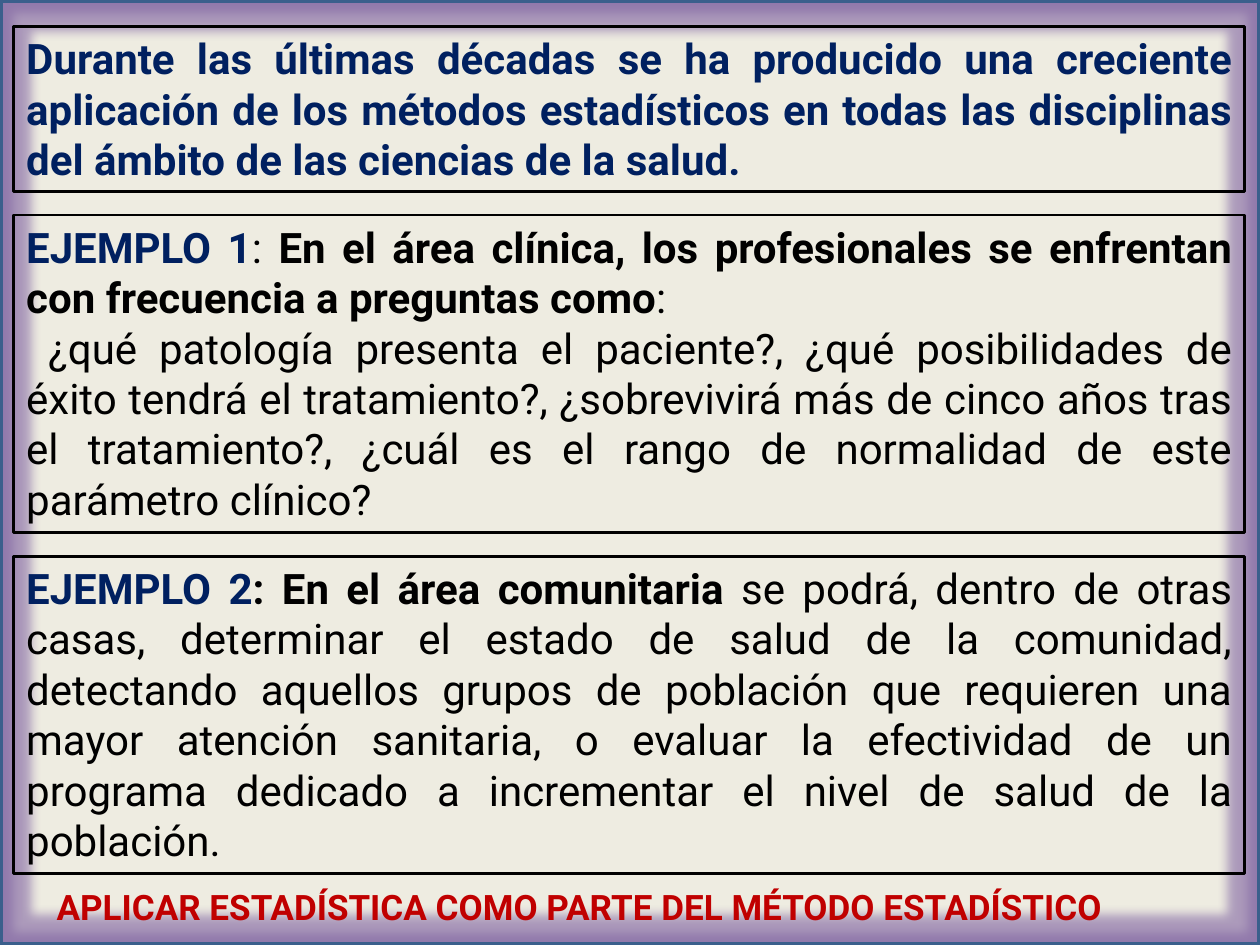
from typing import NamedTuple

from lxml.etree import SubElement
from pptx import Presentation
from pptx.dml.color import RGBColor
from pptx.enum.shapes import MSO_SHAPE as Shape
from pptx.enum.text import MSO_ANCHOR as Anchor, MSO_AUTO_SIZE as AutoSize, PP_ALIGN as Align
from pptx.oxml.ns import qn
from pptx.util import Inches, Pt

CREAM = RGBColor(0xEE, 0xEC, 0xE1)
NAVY = RGBColor(0x00, 0x20, 0x60)
BLACK = RGBColor(0x00, 0x00, 0x00)
RED = RGBColor(0xC0, 0x00, 0x00)
FRAME_BLUE = RGBColor(0x3A, 0x5F, 0x8C)
GLOW_PURPLE = RGBColor(0x80, 0x64, 0xA2)

FONT = "Roboto"
WIDTH, HEIGHT = Inches(10), Inches(7.5)
BODY_SIZE = Pt(24)
LINE_HEIGHT = 1.21 * BODY_SIZE
PADDING = Inches(0.05)

# Shares of the slide's size
BOX_LEFT, BOX_WIDTH = 0.011, 0.977
FIRST_TOP, GAP = 0.028, 0.025
CLOSING_LEFT, CLOSING_TOP, CLOSING_WIDTH, CLOSING_HEIGHT = 0.035, 0.93, 0.965, 0.06


class Piece(NamedTuple):
    text: str
    color: RGBColor = BLACK
    bold: bool = False


class Box(NamedTuple):
    lines: int
    paragraphs: list[list[Piece]]


BOXES = [
    Box(3, [[Piece("Durante las últimas décadas se ha producido una creciente aplicación de los "
                   "métodos estadísticos en todas las disciplinas del ámbito de las ciencias de "
                   "la salud.", NAVY, True)]]),
    Box(6, [
        [Piece("EJEMPLO 1", NAVY, True),
         Piece(": "),
         Piece("En el área clínica, los profesionales se enfrentan con frecuencia a "
               "preguntas como", bold=True),
         Piece(":")],
        [Piece(" ¿qué patología presenta el paciente?, ¿qué posibilidades de éxito tendrá el "
               "tratamiento?, ¿sobrevivirá más de cinco años tras el tratamiento?, ¿cuál es el "
               "rango de normalidad de este parámetro clínico?")],
    ]),
    Box(6, [
        [Piece("EJEMPLO 2", NAVY, True),
         Piece(": En el área comunitaria ", bold=True),
         Piece("se podrá, dentro de otras casas, determinar el estado de salud de la comunidad, "
               "detectando aquellos grupos de población que requieren una mayor atención "
               "sanitaria, o evaluar la efectividad de un programa dedicado a incrementar el "
               "nivel de salud de la población.")],
    ]),
]
CLOSING = [[Piece("APLICAR ESTADÍSTICA COMO PARTE DEL MÉTODO ESTADÍSTICO", RED, True)]]


def add_outline(slide, left: int, top: int, width: int, height: int,
                color: RGBColor, weight: float):
    """Add an unfilled rectangle with a coloured line."""
    outline = slide.shapes.add_shape(Shape.RECTANGLE, left, top, width, height)
    outline.shadow.inherit = False
    outline.fill.background()
    outline.line.color.rgb = color
    outline.line.width = Pt(weight)
    return outline


def add_glow(shape, color: RGBColor, radius: int, opacity: int) -> None:
    """Put a soft glow around the shape's line."""
    effects = shape._element.spPr.find(qn("a:effectLst"))
    glow = SubElement(effects, qn("a:glow"), rad=str(radius))
    tint = SubElement(glow, qn("a:srgbClr"), val=str(color))
    SubElement(tint, qn("a:alpha"), val=str(opacity * 1000))


def write(shape, paragraphs: list[list[Piece]], size: int, align: Align) -> None:
    """Fill the shape with formatted paragraphs."""
    frame = shape.text_frame
    frame.word_wrap = True
    frame.vertical_anchor = Anchor.TOP
    frame.auto_size = AutoSize.SHAPE_TO_FIT_TEXT
    for index, pieces in enumerate(paragraphs):
        paragraph = frame.add_paragraph() if index else frame.paragraphs[0]
        paragraph.alignment = align
        for piece in pieces:
            run = paragraph.add_run()
            run.text = piece.text
            run.font.name = FONT
            run.font.size = size
            run.font.bold = piece.bold
            run.font.color.rgb = piece.color


def main() -> None:
    deck = Presentation()
    deck.slide_width, deck.slide_height = WIDTH, HEIGHT
    slide = deck.slides.add_slide(deck.slide_layouts[6])
    slide.background.fill.solid()
    slide.background.fill.fore_color.rgb = CREAM

    # Glowing frame around the slide
    border = add_outline(slide, 0, 0, WIDTH, HEIGHT, FRAME_BLUE, 3)
    add_glow(border, GLOW_PURPLE, Pt(11), 60)

    # Stacked statement boxes, each as tall as its lines
    top = FIRST_TOP * HEIGHT
    for box in BOXES:
        height = box.lines * LINE_HEIGHT + 2 * PADDING
        statement = add_outline(slide, int(BOX_LEFT * WIDTH), int(top),
                                int(BOX_WIDTH * WIDTH), int(height), BLACK, 1.5)
        write(statement, box.paragraphs, BODY_SIZE, Align.JUSTIFY)
        top += height + GAP * HEIGHT

    # Closing line
    closing = slide.shapes.add_textbox(int(CLOSING_LEFT * WIDTH), int(CLOSING_TOP * HEIGHT),
                                       int(CLOSING_WIDTH * WIDTH), int(CLOSING_HEIGHT * HEIGHT))
    write(closing, CLOSING, Pt(20), Align.LEFT)

    deck.save("out.pptx")


if __name__ == "__main__":
    main()
